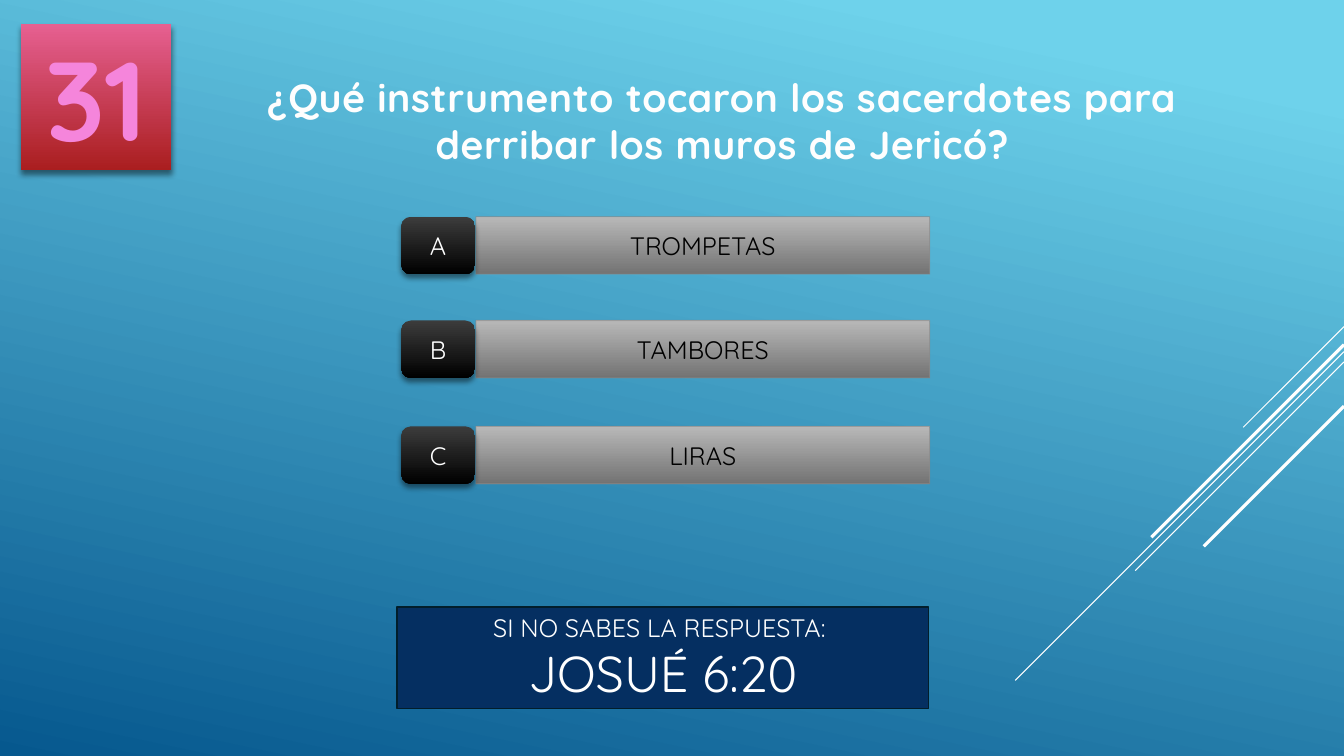
from dataclasses import dataclass

from lxml.etree import SubElement
from pptx import Presentation
from pptx.dml.color import RGBColor
from pptx.enum.shapes import MSO_CONNECTOR, MSO_SHAPE
from pptx.enum.text import MSO_ANCHOR, MSO_AUTO_SIZE, PP_ALIGN
from pptx.oxml.ns import qn
from pptx.util import Inches, Pt

WIDE, HIGH = Inches(13.33), Inches(7.5)


@dataclass(frozen=True)
class Theme:
    font: str = "Quicksand"
    white: str = "FFFFFF"
    black: str = "000000"
    navy: str = "052F61"
    frame: str = "021E2B"
    title: str = "FEFEFE"
    pink: str = "F585DB"
    plum: str = "A50E82"
    edge: str = "898989"
    sky: tuple = ("6ED2EB", "06588E")
    bar: tuple = ("B8B8B8", "737373")
    badge: tuple = ("3C3C3C", "000000")
    tile: tuple = ("E66091", "AA1E1F")
    small: int = 18
    head: int = 28
    large: int = 36
    huge: int = 80


def put_color(parent, color, alpha=100):
    node = SubElement(parent, qn("a:srgbClr"), val=color)
    SubElement(node, qn("a:alpha"), val=str(alpha * 1000))


def put_shadow(effects, blur, dist, angle, alpha, color):
    node = SubElement(effects, qn("a:outerShdw"), blurRad=str(Pt(blur)),
                      dist=str(Pt(dist)), dir=str(angle * 60000),
                      algn="ctr", rotWithShape="0")
    put_color(node, color, alpha)


def put_fade(fill, colors, angle=90, start=0):
    fill.gradient()
    fill.gradient_angle = 360 - angle
    for stop, color, place in zip(fill.gradient_stops, colors, (start, 1)):
        stop.color.rgb = RGBColor.from_string(color)
        stop.position = place


class Board:
    """Draws on one slide; lengths are percent shares of its width and height."""

    def __init__(self, theme):
        self.theme = theme
        self.deck = Presentation()
        self.deck.slide_width, self.deck.slide_height = WIDE, HIGH
        self.slide = self.deck.slides.add_slide(self.deck.slide_layouts[5])
        put_fade(self.slide.background.fill, theme.sky, angle=102, start=0.1)

    def area(self, left, top, width, height):
        return [round(share * side / 100) for share, side in
                zip((left, top, width, height), (WIDE, HIGH) * 2)]

    def label(self, frame, lines, color, bold=False, edge=None, glow=False):
        frame.word_wrap = True
        for index, (text, size) in enumerate(lines):
            para = frame.add_paragraph() if index else frame.paragraphs[0]
            para.alignment = PP_ALIGN.CENTER
            run = para.add_run()
            run.text = text
            font = run.font
            font.size, font.bold = Pt(size), bold
            font.color.rgb = RGBColor.from_string(color)
            props = run._r.get_or_add_rPr()
            if edge:
                line = SubElement(props, qn("a:ln"), w=str(Pt(edge[1])))
                put_color(SubElement(line, qn("a:solidFill")), edge[0])
                props.insert(0, line)
            if glow:
                props.set("spc", "50")
                put_shadow(SubElement(props, qn("a:effectLst")),
                           3, 2, 45, 45, self.theme.black)
            font.name = self.theme.font

    def grow(self, frame):
        frame.vertical_anchor = MSO_ANCHOR.TOP
        frame.auto_size = MSO_AUTO_SIZE.SHAPE_TO_FIT_TEXT

    def title(self, text, area):
        shape = self.slide.shapes.title
        shape.left, shape.top, shape.width, shape.height = self.area(*area)
        self.grow(shape.text_frame)
        self.label(shape.text_frame, [(text, self.theme.head)], self.theme.title,
                   bold=True, edge=(self.theme.navy, 0.75), glow=True)

    def box(self, area, fill, kind=MSO_SHAPE.RECTANGLE, line=None, shade=False):
        shape = self.slide.shapes.add_shape(kind, *self.area(*area))
        shape.shadow.inherit = False
        props = shape.element.spPr
        if shade:
            put_shadow(props.find(qn("a:effectLst")), 4, 3, 90, 46, self.theme.black)
        if isinstance(fill, tuple):
            put_fade(shape.fill, fill)
        else:
            shape.fill.solid()
            shape.fill.fore_color.rgb = RGBColor.from_string(fill)
        if line:
            color, width, alpha = line
            shape.line.width = Pt(width)
            shape.line.color.rgb = RGBColor.from_string(color)
            tint = props.find(qn("a:ln")).find(".//" + qn("a:srgbClr"))
            SubElement(tint, qn("a:alpha"), val=str(alpha * 1000))
        else:
            shape.line.fill.background()
        shape.text_frame.vertical_anchor = MSO_ANCHOR.MIDDLE
        return shape.text_frame

    def streak(self, top, run, width):
        """Draw a 45-degree line down and left from the right edge."""
        drop = run * WIDE / HIGH
        ends = self.area(100, top, 100 - run, top + drop)
        line = self.slide.shapes.add_connector(MSO_CONNECTOR.STRAIGHT, *ends)
        line.line.width = Pt(width)
        line.line.color.rgb = RGBColor.from_string(self.theme.white)
        SubElement(line._element.spPr, qn("a:effectLst"))


def main():
    theme = Theme()
    board = Board(theme)

    # Diagonal streaks
    for streak in ((43.2, 7.5, 0.75), (46.53, 24.46, 0.75), (47.87, 15.53, 0.75),
                   (45.6, 14.33, 2.25), (53.73, 10.43, 2.25)):
        board.streak(*streak)

    # Question
    board.title("¿Qué instrumento tocaron los sacerdotes para derribar "
                "los muros de Jericó?", (13.65, 9.07, 80.2, 13.87))

    # Answers
    answers = (("A", "TROMPETAS", 28.67), ("B", "TAMBORES", 42.4), ("C", "LIRAS", 56.4))
    for letter, answer, top in answers:
        bar = board.box((35.41, top, 33.76, 7.6), theme.bar,
                        line=(theme.edge, 0.75, 60))
        board.label(bar, [(answer, theme.small)], theme.black)
        badge = board.box((29.86, top, 5.48, 7.6), theme.badge,
                          kind=MSO_SHAPE.ROUNDED_RECTANGLE, shade=True)
        board.label(badge, [(letter, theme.small)], theme.white)

    # Hint
    hint = board.box((29.56, 80.27, 39.53, 13.47), theme.navy,
                     line=(theme.frame, 1.25, 100))
    board.label(hint, [("SI NO SABES LA RESPUESTA: ", theme.small),
                       ("JOSUÉ 6:20", theme.large)], theme.white)

    # Question number
    tile = board.box((1.58, 3.2, 11.18, 19.33), theme.tile, shade=True)
    board.grow(tile)
    board.label(tile, [("31", theme.huge)], theme.pink, bold=True,
                edge=(theme.plum, 1.75))

    board.deck.save("out.pptx")


if __name__ == "__main__":
    main()
